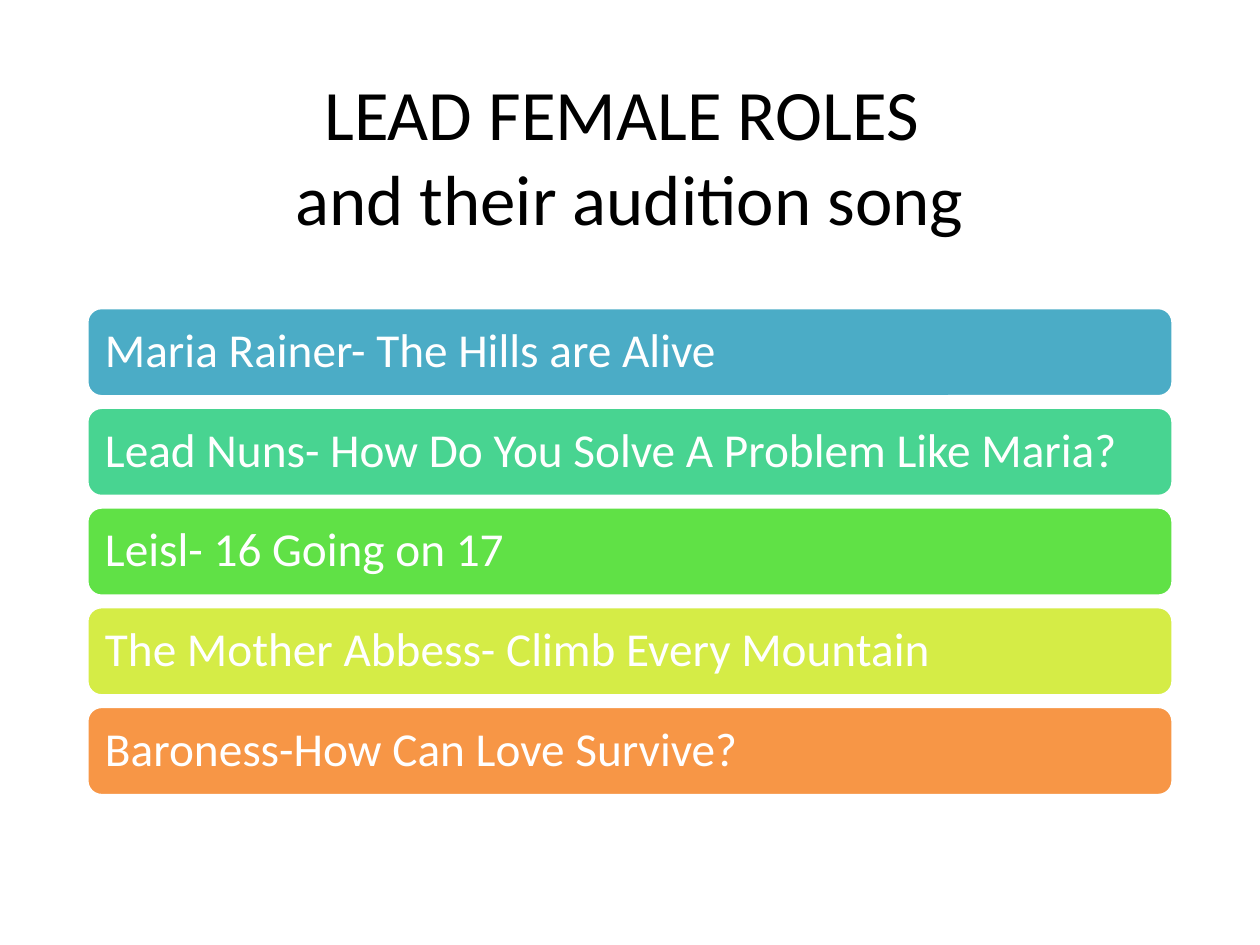
import pptx
import pptx.dml.color
import pptx.enum.shapes
import pptx.enum.text
import pptx.util

Cm = pptx.util.Cm
Pt = pptx.util.Pt


def rgb(value):
    return pptx.dml.color.RGBColor.from_string(value)


def write_text(shape, text, size, color, alignment):
    frame = shape.text_frame
    frame.word_wrap = True
    frame.vertical_anchor = pptx.enum.text.MSO_ANCHOR.MIDDLE
    para = frame.paragraphs[0]
    para.text = text
    para.alignment = alignment
    para.font.name = "Calibri"
    para.font.size = Pt(size)
    para.font.color.rgb = rgb(color)
    return frame


deck = pptx.Presentation()
deck.slide_width = Cm(25.4)
deck.slide_height = Cm(19.05)
slide = deck.slides.add_slide(deck.slide_layouts[6])

left, width = Cm(1.75), Cm(21.9)

title = slide.shapes.add_textbox(left, Cm(1.55), width, Cm(3.15))
write_text(title, "LEAD FEMALE ROLES \vand their audition song", 40.5, "000000",
           pptx.enum.text.PP_ALIGN.CENTER)

roles = [
    ("Maria Rainer- The Hills are Alive", "4BACC6"),
    ("Lead Nuns- How Do You Solve A Problem Like Maria?", "48D491"),
    ("Leisl- 16 Going on 17", "60E146"),
    ("The Mother Abbess- Climb Every Mountain", "D5EC46"),
    ("Baroness-How Can Love Survive?", "F79646"),
]
first_top, pitch = Cm(6.2), Cm(2.01)

for index, (role, color) in enumerate(roles):
    bar = slide.shapes.add_shape(
        pptx.enum.shapes.MSO_SHAPE.ROUNDED_RECTANGLE,
        left, first_top + index * pitch, width, Cm(1.8))
    bar.shadow.inherit = False
    bar.fill.solid()
    bar.fill.fore_color.rgb = rgb(color)
    bar.line.color.rgb = rgb("FFFFFF")
    bar.line.width = Pt(2)
    frame = write_text(bar, role, 27, "FFFFFF", pptx.enum.text.PP_ALIGN.LEFT)
    frame.margin_left = frame.margin_right = Cm(0.28)
    frame.margin_top = frame.margin_bottom = Cm(0.28)
    frame.paragraphs[0].line_spacing = 0.9

deck.save("out.pptx")
